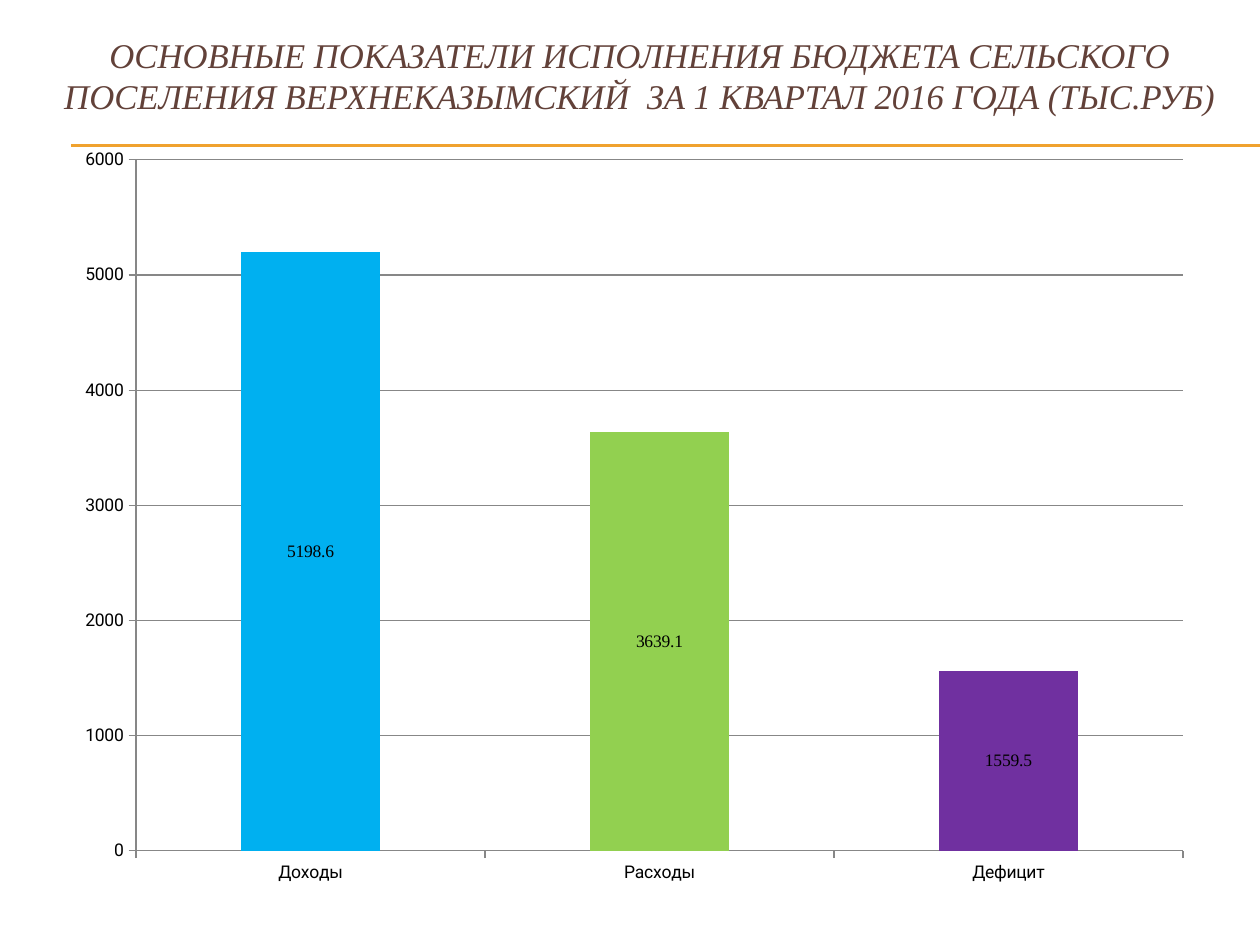
import dataclasses
import typing

import lxml.etree
import pptx
import pptx.chart.data
import pptx.dml.color
import pptx.enum.chart
import pptx.enum.shapes
import pptx.enum.text
import pptx.oxml
import pptx.oxml.ns
import pptx.util


@dataclasses.dataclass(frozen=True)
class Theme:
    title: str = "624139"
    rule: str = "F0A22E"
    ink: str = "000000"
    grid: str = "878787"
    serif: str = "Times New Roman"
    sans: str = "Roboto"
    head: float = 19.8
    small: float = 10


class Box(typing.NamedTuple):
    x: int
    y: int
    w: int
    h: int


class Bar(typing.NamedTuple):
    name: str
    value: float
    color: str


class Rule(typing.NamedTuple):
    left: int
    right: int
    y: int


THEME = Theme()
PAGE = Box(0, 0, 1260, 945)
HEAD = Box(44, 16, 1191, 118)
CHART = Box(63, 135, 1143, 764)
PLOT = Box(136, 160, 1047, 691)
RULES = [Rule(71, 1260, y) for y in (145, 146)]
BARS = [
    Bar("Доходы", 5198.6, "00B0F0"),
    Bar("Расходы", 3639.1, "92D050"),
    Bar("Дефицит", 1559.5, "7030A0"),
]
TITLE = ("ОСНОВНЫЕ ПОКАЗАТЕЛИ ИСПОЛНЕНИЯ БЮДЖЕТА СЕЛЬСКОГО "
         "ПОСЕЛЕНИЯ ВЕРХНЕКАЗЫМСКИЙ  ЗА 1 КВАРТАЛ 2016 ГОДА (ТЫС.РУБ)")


def px(n: int) -> int:
    return round(n * 914400 / 126)


def rgb(code: str) -> pptx.dml.color.RGBColor:
    return pptx.dml.color.RGBColor.from_string(code)


def style(font, *, size: float, face: str, color: str, italic: bool = False) -> None:
    font.size = pptx.util.Pt(size)
    font.name = face
    font.color.rgb = rgb(color)
    font.italic = italic
    font.bold = False


def write(shape, text: str, *, align, anchor, **form) -> None:
    frame = shape.text_frame
    frame.word_wrap = True
    frame.auto_size = pptx.enum.text.MSO_AUTO_SIZE.NONE
    frame.vertical_anchor = anchor
    para = frame.paragraphs[0]
    para.alignment = align
    run = para.add_run()
    run.text = text
    style(run.font, **form)


def place(shape, box: Box) -> None:
    shape.left, shape.top, shape.width, shape.height = map(px, box)


def draw_rule(slide, rule: Rule) -> None:
    line = slide.shapes.add_connector(
        pptx.enum.shapes.MSO_CONNECTOR.STRAIGHT,
        px(rule.left), px(rule.y), px(rule.right), px(rule.y))
    line.line.color.rgb = rgb(THEME.rule)
    line.line.width = pptx.util.Pt(0.75)
    lxml.etree.SubElement(line._element.spPr, pptx.oxml.ns.qn("a:effectLst"))


def fix_plot(chart, box: Box, area: Box) -> None:
    parts = {
        "x": (area.x - box.x) / box.w,
        "y": (area.y - box.y) / box.h,
        "w": area.w / box.w,
        "h": area.h / box.h,
    }
    modes = "".join(f'<c:{k}Mode val="edge"/>' for k in "xy")
    sizes = "".join(f'<c:{k} val="{v:.4f}"/>' for k, v in parts.items())
    layout = pptx.oxml.parse_xml(
        f'<c:layout {pptx.oxml.ns.nsdecls("c")}><c:manualLayout>'
        f'<c:layoutTarget val="inner"/>{modes}{sizes}</c:manualLayout></c:layout>')
    plot = chart._chartSpace.chart.plotArea
    for old in plot.findall(pptx.oxml.ns.qn("c:layout")):
        plot.remove(old)
    plot.insert(0, layout)


def draw_chart(slide, box: Box, bars: list[Bar]) -> None:
    kinds = pptx.enum.chart
    data = pptx.chart.data.CategoryChartData(number_format="0.0")
    data.categories = [bar.name for bar in bars]
    data.add_series("Series 1", [bar.value for bar in bars])
    chart = slide.shapes.add_chart(
        kinds.XL_CHART_TYPE.COLUMN_STACKED, *map(px, box), data).chart
    chart.has_legend = False
    chart.has_title = False
    style(chart.font, size=THEME.small, face=THEME.sans, color=THEME.ink)
    fix_plot(chart, box, PLOT)

    axis = chart.value_axis
    axis.minimum_scale, axis.maximum_scale, axis.major_unit = 0, 6000, 1000
    axis.has_major_gridlines = True
    axis.major_gridlines.format.line.color.rgb = rgb(THEME.grid)
    axis.tick_labels.number_format = "0"
    axis.tick_labels.number_format_is_linked = False
    for item in (axis, chart.category_axis):
        item.major_tick_mark = kinds.XL_TICK_MARK.OUTSIDE
        item.format.line.color.rgb = rgb(THEME.grid)

    plot = chart.plots[0]
    plot.vary_by_categories = False
    plot.gap_width, plot.overlap = 150, 100
    series = plot.series[0]
    series.format.fill.solid()
    series.format.fill.fore_color.rgb = rgb(THEME.rule)
    for i, bar in enumerate(bars):
        fill = series.points[i].format.fill
        fill.solid()
        fill.fore_color.rgb = rgb(bar.color)
    labels = series.data_labels
    labels.show_value = True
    labels.number_format = "0.0"
    labels.number_format_is_linked = False
    labels.position = kinds.XL_LABEL_POSITION.CENTER
    style(labels.font, size=THEME.small, face=THEME.serif, color=THEME.ink)


def main() -> None:
    deck = pptx.Presentation()
    deck.slide_width, deck.slide_height = px(PAGE.w), px(PAGE.h)
    slide = deck.slides.add_slide(deck.slide_layouts[5])
    for rule in RULES:
        draw_rule(slide, rule)
    head = slide.shapes.title
    place(head, HEAD)
    write(head, TITLE, align=pptx.enum.text.PP_ALIGN.CENTER,
          anchor=pptx.enum.text.MSO_ANCHOR.MIDDLE, size=THEME.head,
          face=THEME.serif, color=THEME.title, italic=True)
    draw_chart(slide, CHART, BARS)
    deck.save("out.pptx")


if __name__ == "__main__":
    main()
